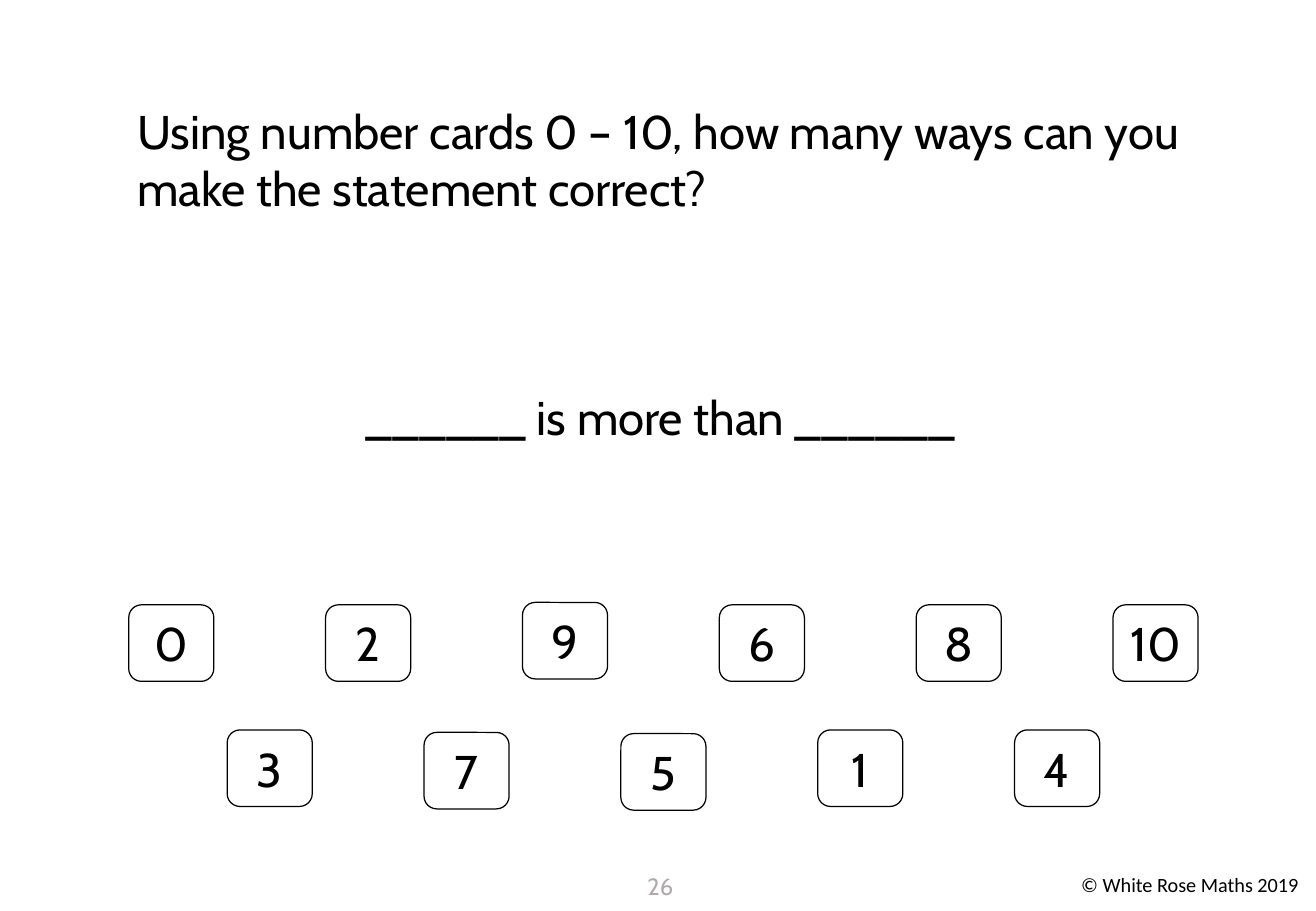
from dataclasses import dataclass

from pptx import Presentation
from pptx.dml.color import RGBColor
from pptx.enum.shapes import MSO_SHAPE as Preset
from pptx.enum.text import MSO_ANCHOR as Anchor, MSO_AUTO_SIZE as AutoSize, PP_ALIGN as Align
from pptx.shapes.autoshape import Shape
from pptx.slide import Slide
from pptx.util import Inches, Pt

COLORS = {"ink": "000000", "page": "AFABAB"}

# Card grid: neighbouring cards in a row are two columns apart
GRID_LEFT, GRID_TOP = 1.06, 4.98
COLUMN, ROW = 0.81, 1.03
CARD_WIDTH, CARD_HEIGHT = 0.7, 0.63


@dataclass(frozen=True)
class Card:
    number: int
    column: int
    row: int
    nudge: float = 0


CARDS = [
    Card(0, 0, 0), Card(2, 2, 0), Card(9, 4, 0, -0.02),
    Card(6, 6, 0), Card(8, 8, 0), Card(10, 10, 0),
    Card(3, 1, 1), Card(7, 3, 1, 0.02), Card(5, 5, 1, 0.03),
    Card(1, 7, 1), Card(4, 9, 1),
]


def place(shape: Shape, left: float, top: float, width: float, height: float) -> Shape:
    shape.left, shape.top = Inches(left), Inches(top)
    shape.width, shape.height = Inches(width), Inches(height)
    return shape


def write(shape: Shape, text: str, *, size: float = 28, font: str = "Cabin",
          color: str = "ink", align: Align = Align.CENTER,
          anchor: Anchor = Anchor.TOP, wrap: bool = True) -> None:
    frame = shape.text_frame
    frame.text = text
    frame.word_wrap = wrap
    frame.auto_size = AutoSize.NONE
    frame.vertical_anchor = anchor
    paragraph = frame.paragraphs[0]
    paragraph.alignment = align
    run_font = paragraph.runs[0].font
    run_font.name, run_font.size = font, Pt(size)
    run_font.color.rgb = RGBColor.from_string(COLORS[color])


def add_text(slide: Slide, text: str, left: float, top: float,
             width: float, height: float, **text_format) -> None:
    box = slide.shapes.add_textbox(0, 0, 0, 0)
    write(place(box, left, top, width, height), text, **text_format)


def add_card(slide: Slide, card: Card) -> None:
    outline = slide.shapes.add_shape(Preset.ROUNDED_RECTANGLE, 0, 0, 0, 0)
    place(outline, GRID_LEFT + card.column * COLUMN,
          GRID_TOP + card.row * ROW + card.nudge, CARD_WIDTH, CARD_HEIGHT)
    outline.shadow.inherit = False
    outline.fill.background()
    outline.line.color.rgb = RGBColor.from_string(COLORS["ink"])
    outline.line.width = Pt(0.75)
    write(outline, str(card.number), anchor=Anchor.MIDDLE)


def main() -> None:
    deck = Presentation()
    deck.slide_width, deck.slide_height = Inches(10.83), Inches(7.5)
    slide = deck.slides.add_slide(deck.slide_layouts[5])

    # Question and statement to complete
    question = place(slide.shapes.title, 1.03, 0.79, 8.81, 1.04)
    write(question, "Using number cards 0 – 10, how many ways can you "
                    "make the statement correct?", align=Align.LEFT)
    add_text(slide, "______ is more than ______", 1.03, 3.15, 8.81, 0.57)

    # Number cards
    for card in CARDS:
        add_card(slide, card)

    # Footer
    add_text(slide, "26", 5.18, 7.13, 0.51, 0.4, size=14, color="page")
    add_text(slide, "© White Rose Maths 2019", 8.8, 7.13, 2.03, 0.3,
             size=12, font="Calibri", align=Align.LEFT, wrap=False)

    deck.save("out.pptx")


if __name__ == "__main__":
    main()
